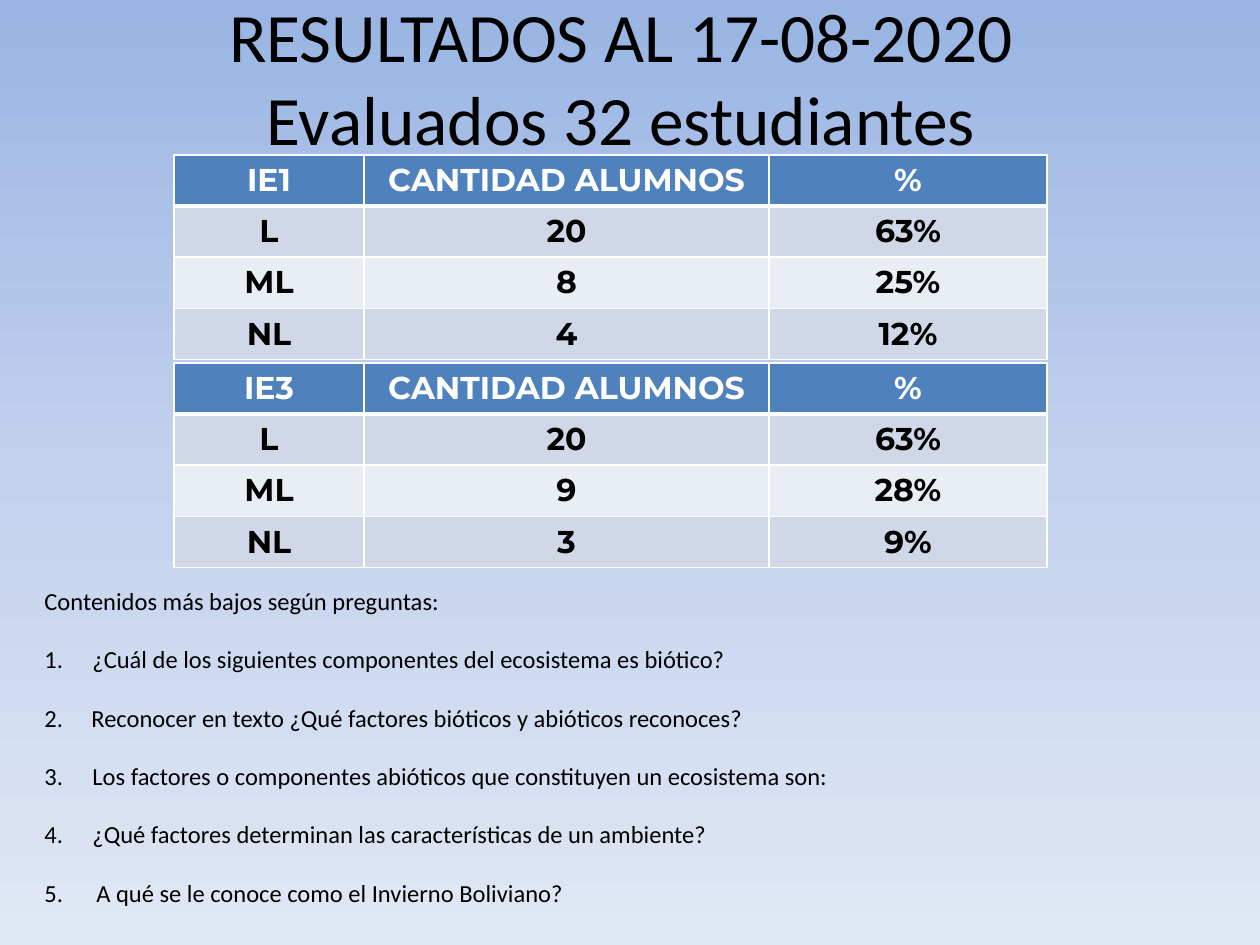
from lxml import etree
from pptx import Presentation
from pptx.dml.color import RGBColor
from pptx.enum.text import MSO_ANCHOR, MSO_AUTO_SIZE, PP_ALIGN
from pptx.oxml.ns import qn
from pptx.util import Pt

PX = 914400 / 126
CENTER, LEFT = PP_ALIGN.CENTER, PP_ALIGN.LEFT
MIDDLE, NO_FIT = MSO_ANCHOR.MIDDLE, MSO_AUTO_SIZE.NONE
COLORS = {"text": "000000", "white": "FFFFFF", "header": "4F81BD",
          "odd": "D0D8E8", "even": "E9EDF4"}
BACKGROUND = {0: "9AB5E4", 50: "C2D1ED", 100: "E1E8F5"}
TITLE_FONT = {"name": "Calibri", "size": Pt(39.6), "bold": False}
BODY_FONT = {"name": "Calibri", "size": Pt(14), "bold": False}
TABLE_FONT = {"name": "Montserrat", "size": Pt(18), "bold": True}


def px(*values):
    return [round(v * PX) for v in values]


def write(p, text, style, color, align):
    p.text = text
    p.alignment = align
    for r in p.runs:
        for key, value in style.items():
            setattr(r.font, key, value)
        r.font.color.rgb = RGBColor.from_string(COLORS[color])


prs = Presentation()
prs.slide_width, prs.slide_height = px(1260, 945)
s = prs.slides.add_slide(prs.slide_layouts[5])

fill = s.background.fill
fill.gradient()
fill.gradient_angle = 270
stops = next(s.element.iter(qn("a:gsLst")))
for stop in list(stops):
    stops.remove(stop)
for pos, color in BACKGROUND.items():
    stop = etree.SubElement(stops, qn("a:gs"), pos=str(pos * 1000))
    etree.SubElement(stop, qn("a:srgbClr"), val=color)

title = s.shapes.title
title.left, title.top, title.width, title.height = px(54, 26, 1134, 100)
tf = title.text_frame
tf.auto_size = NO_FIT
tf.vertical_anchor = MIDDLE
write(tf.paragraphs[0], "RESULTADOS AL 17-08-2020\vEvaluados 32 estudiantes",
      TITLE_FONT, "text", CENTER)

results = [
    (155, [("IE1", "CANTIDAD ALUMNOS", "%"), ("L", "20", "63%"),
           ("ML", "8", "25%"), ("NL", "4", "12%")]),
    (363, [("IE3", "CANTIDAD ALUMNOS", "%"), ("L", "20", "63%"),
           ("ML", "9", "28%"), ("NL", "3", "9%")]),
]
for top, rows in results:
    table = s.shapes.add_table(4, 3, *px(174, top, 873, 204)).table
    for col, width in zip(table.columns, px(190, 405, 278)):
        col.width = width
    for i, values in enumerate(rows):
        table.rows[i].height = px(51)[0]
        row_fill = "header" if i == 0 else "odd" if i % 2 else "even"
        for j, value in enumerate(values):
            cell = table.cell(i, j)
            write(cell.text_frame.paragraphs[0], value, TABLE_FONT,
                  "text" if i else "white", CENTER)
            tcPr = cell._tc.get_or_add_tcPr()
            for side in ("lnL", "lnR", "lnT", "lnB"):
                thick = (i, side) in ((0, "lnB"), (1, "lnT"))
                ln = etree.SubElement(tcPr, qn(f"a:{side}"),
                                      w=str(Pt(3 if thick else 1)))
                solid = etree.SubElement(ln, qn("a:solidFill"))
                etree.SubElement(solid, qn("a:srgbClr"), val=COLORS["white"])
            cell.fill.solid()
            cell.fill.fore_color.rgb = RGBColor.from_string(COLORS[row_fill])

questions = [
    ("¿Cuál de los siguientes componentes del ecosistema es biótico?", 48),
    ("Reconocer en texto ¿Qué factores bióticos y abióticos reconoces?", 47),
    ("Los factores o componentes abióticos que constituyen un ecosistema son:", 48),
    ("¿Qué factores determinan las características de un ambiente?", 48),
    ("A qué se le conoce como el Invierno Boliviano?", 52),
]
tf = s.shapes.add_textbox(*px(32, 580, 1180, 339)).text_frame
tf.word_wrap = True
write(tf.paragraphs[0], "Contenidos más bajos según preguntas:", BODY_FONT, "text", LEFT)
for text, indent in questions:
    p = tf.add_paragraph()
    write(p, text, BODY_FONT, "text", LEFT)
    p.space_before = Pt(16.5)
    pPr = p._p.get_or_add_pPr()
    pPr.set("marL", str(px(indent)[0]))
    pPr.set("indent", str(px(-indent)[0]))
    etree.SubElement(pPr, qn("a:buFont"), typeface="+mj-lt")
    etree.SubElement(pPr, qn("a:buAutoNum"), type="arabicPeriod")

prs.save("out.pptx")
